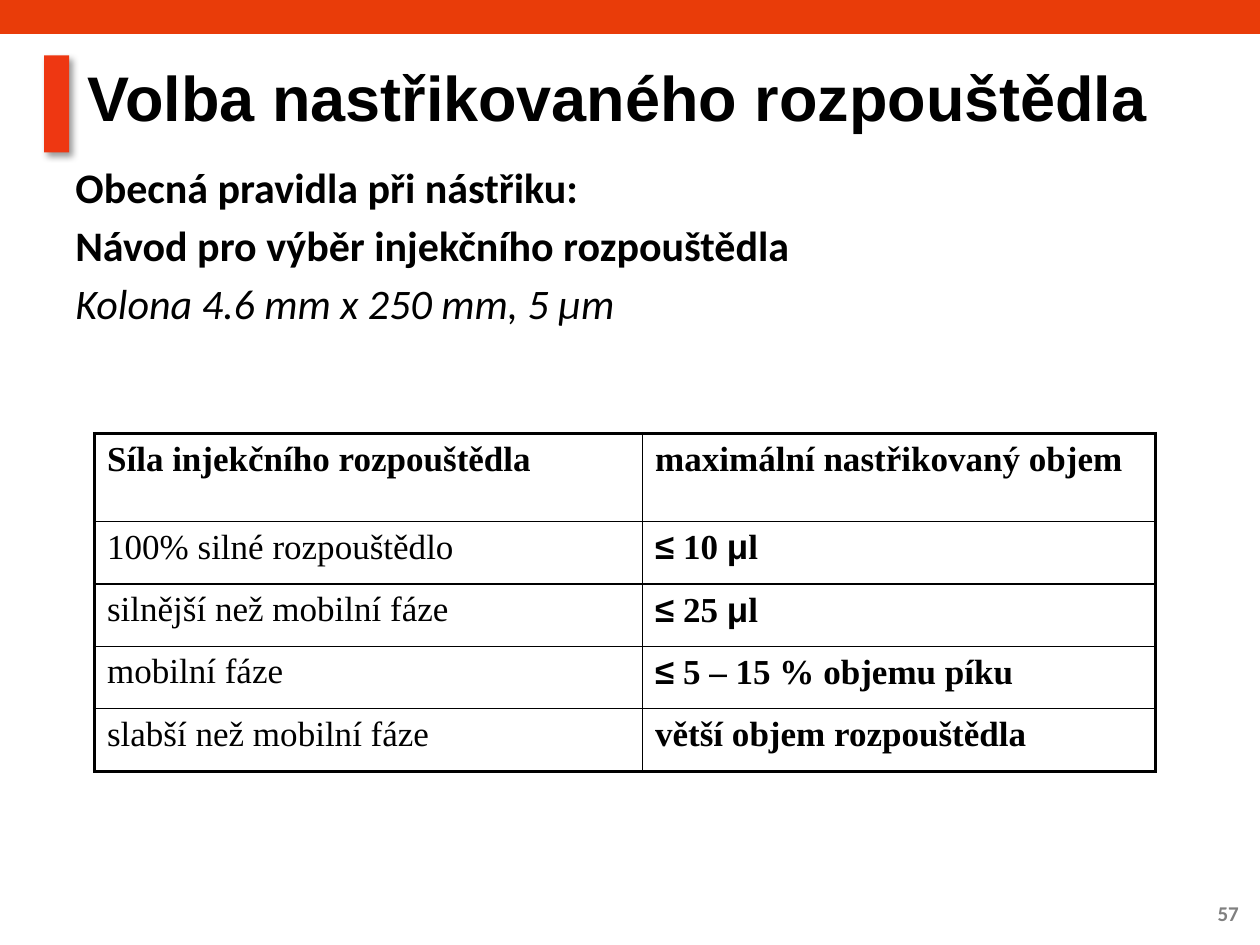
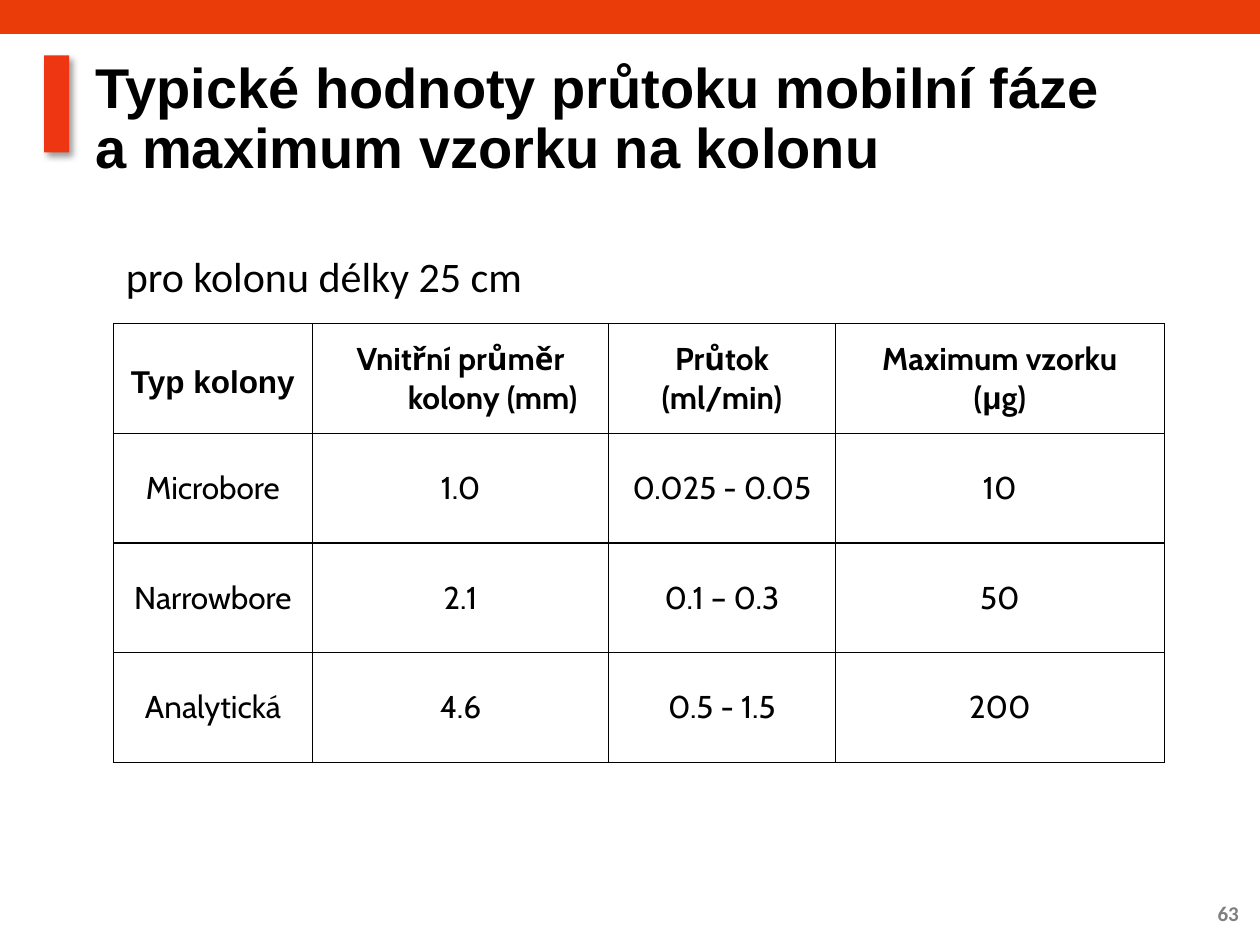
from dataclasses import dataclass
from itertools import groupby

from lxml import etree
from pptx import Presentation
from pptx.dml.color import RGBColor
from pptx.enum.shapes import MSO_SHAPE
from pptx.enum.text import MSO_ANCHOR, PP_ALIGN
from pptx.oxml.ns import qn
from pptx.util import Inches, Pt

BLACK = RGBColor(0x00, 0x00, 0x00)
GREY = RGBColor(0x80, 0x80, 0x80)
BAND_ORANGE = RGBColor(0xE9, 0x3C, 0x09)
MARK_RED = RGBColor(0xEE, 0x37, 0x12)

RECTANGLE = MSO_SHAPE.RECTANGLE
TOP, MIDDLE = MSO_ANCHOR.TOP, MSO_ANCHOR.MIDDLE
LEFT, CENTER, RIGHT = PP_ALIGN.LEFT, PP_ALIGN.CENTER, PP_ALIGN.RIGHT

HEADING_FONT, BODY_FONT = "Arial", "Calibri"
SYMBOLS = "≤μ"  # set in the heading font inside table cells
CELL_HANG = 0.51


@dataclass(frozen=True)
class Box:
    left: float
    top: float
    width: float
    height: float

    def lengths(self) -> list:
        return [Inches(v) for v in (self.left, self.top, self.width, self.height)]


@dataclass(frozen=True)
class Style:
    font: str
    size: float
    bold: bool = False
    italic: bool = False
    color: RGBColor = BLACK


@dataclass(frozen=True)
class Line:
    text: str
    style: Style


@dataclass(frozen=True)
class Grid:
    left: float
    top: float
    columns: list
    rows: list
    font: str
    size: float
    align: PP_ALIGN
    anchor: MSO_ANCHOR
    inner_line: float
    outer_line: float
    bold_column: int = -1  # column set in bold below the header


def format_run(run, style: Style) -> None:
    font = run.font
    font.name, font.size = style.font, Pt(style.size)
    font.bold, font.italic = style.bold, style.italic
    font.color.rgb = style.color


def hang(paragraph, indent: float) -> None:
    properties = paragraph._p.get_or_add_pPr()
    properties.set("marL", str(Inches(indent)))
    properties.set("indent", str(-Inches(indent)))


def add_text(slide, box: Box, lines: list, anchor=TOP, align=LEFT,
             spacing: float = 1.0, before: float = 0, indent: float = 0) -> None:
    frame = slide.shapes.add_textbox(*box.lengths()).text_frame
    frame.word_wrap = True
    frame.vertical_anchor = anchor
    for index, line in enumerate(lines):
        paragraph = frame.add_paragraph() if index else frame.paragraphs[0]
        paragraph.text = line.text
        paragraph.alignment = align
        paragraph.line_spacing = spacing
        if index:
            paragraph.space_before = Pt(before)
        if indent:
            hang(paragraph, indent)
        for run in paragraph.runs:
            format_run(run, line.style)


def add_bar(slide, box: Box, color: RGBColor):
    bar = slide.shapes.add_shape(RECTANGLE, *box.lengths())
    bar.shadow.inherit = False
    bar.fill.solid()
    bar.fill.fore_color.rgb = color
    bar.line.fill.background()
    return bar


def add_soft_shadow(shape) -> None:
    effects = shape._element.spPr.find(qn("a:effectLst"))
    shadow = etree.SubElement(effects, qn("a:outerShdw"), blurRad=str(Pt(4)),
                              dist=str(Pt(3)), dir=str(45 * 60000), rotWithShape="0")
    color = etree.SubElement(shadow, qn("a:srgbClr"), val=str(BLACK))
    etree.SubElement(color, qn("a:alpha"), val="40000")


def add_base_slide(deck, number: int, title: str, title_box: Box, title_size: float):
    """Blank slide with the shared band, title mark, title and page number."""
    slide = deck.slides.add_slide(deck.slide_layouts[6])
    add_bar(slide, Box(0, 0, 10, 0.27), BAND_ORANGE)
    add_soft_shadow(add_bar(slide, Box(0.35, 0.44, 0.2, 0.77), MARK_RED))
    add_text(slide, Box(9.25, 7.05, 0.68, 0.4),
             [Line(str(number), Style(BODY_FONT, 12, bold=True, color=GREY))],
             anchor=MIDDLE, align=RIGHT)
    add_text(slide, title_box, [Line(title, Style(HEADING_FONT, title_size, bold=True))],
             anchor=MIDDLE, spacing=0.9)
    return slide


def set_borders(cell, widths: dict) -> None:
    properties = cell._tc.get_or_add_tcPr()
    for position, (side, width) in enumerate(widths.items()):
        border = etree.Element(qn(f"a:ln{side}"), w=str(Pt(width)))
        fill = etree.SubElement(border, qn("a:solidFill"))
        etree.SubElement(fill, qn("a:srgbClr"), val=str(BLACK))
        properties.insert(position, border)


def fill_cell(cell, text: str, grid: Grid, bold: bool) -> None:
    cell.fill.background()
    cell.vertical_anchor = grid.anchor
    cell.text = text
    for paragraph in cell.text_frame.paragraphs:
        paragraph.alignment = grid.align
        hang(paragraph, CELL_HANG)
        pieces = groupby(paragraph.text, key=lambda char: char in SYMBOLS)
        pieces = [(is_symbol, "".join(chars)) for is_symbol, chars in pieces]
        paragraph.text = ""
        for is_symbol, piece in pieces:
            run = paragraph.add_run()
            run.text = piece
            font = HEADING_FONT if is_symbol else grid.font
            format_run(run, Style(font, grid.size, bold))


def add_grid(slide, grid: Grid, content: list):
    box = Box(grid.left, grid.top, sum(grid.columns), sum(grid.rows))
    last_row, last_column = len(grid.rows) - 1, len(grid.columns) - 1
    table = slide.shapes.add_table(last_row + 1, last_column + 1, *box.lengths()).table
    table.first_row = table.horz_banding = False
    for column, width in zip(table.columns, grid.columns):
        column.width = Inches(width)
    for row, height in zip(table.rows, grid.rows):
        row.height = Inches(height)
    for r, texts in enumerate(content):
        for c, text in enumerate(texts):
            cell = table.cell(r, c)
            fill_cell(cell, text, grid, bold=r == 0 or c == grid.bold_column)
            edges = {"L": c == 0, "R": c == last_column, "T": r == 0, "B": r == last_row}
            set_borders(cell, {side: grid.outer_line if outer else grid.inner_line
                               for side, outer in edges.items()})
    return table


def build_solvent_slide(deck) -> None:
    slide = add_base_slide(deck, 57, "Volba nastřikovaného rozpouštědla",
                           Box(0.6, 0.45, 9.1, 0.71), 36)
    # Injection rules
    rule = Style(BODY_FONT, 24, bold=True)
    add_text(slide, Box(0.5, 1.31, 9, 5.39), [
        Line("Obecná pravidla při nástřiku:", rule),
        Line("Návod pro výběr injekčního rozpouštědla", rule),
        Line("Kolona 4.6 mm x 250 mm, 5 μm", Style(BODY_FONT, 24, italic=True)),
    ], spacing=0.8, before=10, indent=0.25)
    # Solvent strength against injected volume
    volumes = Grid(0.75, 3.44, [4.35, 4.07], [0.7] + [1.98 / 4] * 4,
                   "Times New Roman", 20, LEFT, TOP,
                   inner_line=1, outer_line=2, bold_column=1)
    add_grid(slide, volumes, [
        ("Síla injekčního rozpouštědla", "maximální nastřikovaný objem"),
        ("100% silné rozpouštědlo", "≤ 10 μl"),
        ("silnější než mobilní fáze", "≤ 25 μl"),
        ("mobilní fáze", "≤ 5 – 15 % objemu píku"),
        ("slabší než mobilní fáze", "větší objem rozpouštědla"),
    ])


def build_flow_slide(deck) -> None:
    slide = add_base_slide(
        deck, 63, "Typické hodnoty průtoku mobilní fáze\va maximum vzorku na kolonu",
        Box(0.66, 0.6, 9.1, 0.71), 32)
    # Flow rate and sample load by column type
    flows = Grid(0.9, 2.57, [1.58, 2.35, 1.8, 2.61], [0.87] * 4,
                 "Cabin", 18, CENTER, MIDDLE, inner_line=0.75, outer_line=0.75)
    table = add_grid(slide, flows, [
        ("Typ kolony", "Vnitřní průměr kolony (mm)", "Průtok\n(ml/min)",
         "Maximum vzorku\n(μg)"),
        ("Microbore", "1.0", "0.025 - 0.05", "10"),
        ("Narrowbore", "2.1", "0.1 – 0.3", "50"),
        ("Analytická", "4.6", "0.5 - 1.5", "200"),
    ])
    # The first header sits slightly lower, in the heading font
    column_type = table.cell(0, 0)
    column_type.vertical_anchor = TOP
    column_type.margin_top = Inches(0.33)
    column_type.text_frame.paragraphs[0].runs[0].font.name = HEADING_FONT
    # Column length
    add_text(slide, Box(0.9, 2.02, 8.43, 0.43),
             [Line("pro kolonu délky 25 cm", Style(BODY_FONT, 24))], spacing=0.8)


def main() -> None:
    deck = Presentation()
    deck.slide_width, deck.slide_height = Inches(10), Inches(7.5)
    build_solvent_slide(deck)
    build_flow_slide(deck)
    deck.save("out.pptx")


if __name__ == "__main__":
    main()
